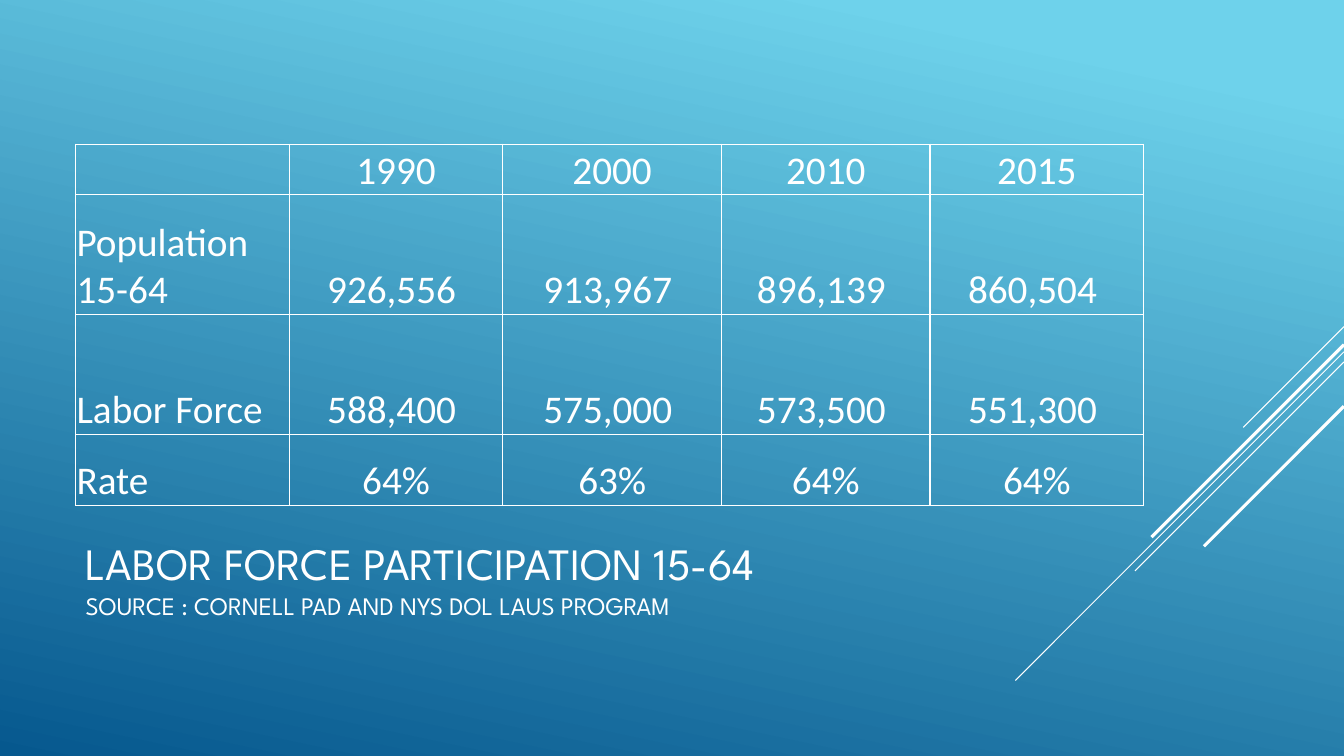
from dataclasses import dataclass

import pptx
import pptx.dml.color
import pptx.enum.shapes
import pptx.enum.text
import pptx.oxml
import pptx.oxml.ns
import pptx.util
from pptx.util import Pt

ANCHOR = pptx.enum.text.MSO_ANCHOR
ALIGN = pptx.enum.text.PP_ALIGN


@dataclass(frozen=True)
class Theme:
    white: str = "FFFFFF"
    sky: str = "6ED2EB"
    deep: str = "06588E"
    title_font: str = "League Spartan"
    table_font: str = "Calibri"
    title_size: int = 32
    source_size: int = 18
    table_size: int = 28


THEME = Theme()
SLIDE_WIDTH, SLIDE_HEIGHT = 960, 540

# Start height on the right edge, horizontal reach, line weight
DIAGONALS = [
    (233.3, 72, 0.75),
    (251.3, 234.7, 0.75),
    (258.5, 149.3, 0.75),
    (246.2, 137.5, 2.25),
    (290.2, 100, 2.25),
]

COLUMN_WIDTHS = [152.6, 152.6, 156.2, 149, 152.6]
ROW_HEIGHTS = [36, 85.7, 85.7, 50.4]
LABOR_ROWS = [
    ["", "1990", "2000", "2010", "2015"],
    ["Population 15-64", "926,556", "913,967", "896,139", "860,504"],
    ["Labor Force", "588,400", "575,000", "573,500", "551,300"],
    ["Rate", "64%", "63%", "64%", "64%"],
]


def rgb(value):
    return pptx.dml.color.RGBColor.from_string(value)


def style_run(run, font, size):
    run.font.name = font
    run.font.size = Pt(size)
    run.font.color.rgb = rgb(THEME.white)


def paint_background(slide):
    fill = slide.background.fill
    fill.gradient()
    fill.gradient_angle = 360 - 102
    stops = [(0.1, THEME.sky), (1, THEME.deep)]
    for stop, (position, color) in zip(fill.gradient_stops, stops):
        stop.position = position
        stop.color.rgb = rgb(color)


def add_diagonal(slide, top, reach, weight):
    diagonal = slide.shapes.add_connector(
        pptx.enum.shapes.MSO_CONNECTOR.STRAIGHT,
        Pt(SLIDE_WIDTH), Pt(top), Pt(SLIDE_WIDTH - reach), Pt(top + reach))
    diagonal.line.color.rgb = rgb(THEME.white)
    diagonal.line.width = Pt(weight)
    properties = diagonal.element.spPr
    properties.append(pptx.oxml.parse_xml(
        f'<a:effectLst {pptx.oxml.ns.nsdecls("a")}/>'))


def add_title(slide, heading, source):
    title = slide.shapes.add_textbox(Pt(54), Pt(353.5), Pt(672), Pt(118.8))
    frame = title.text_frame
    frame.word_wrap = True
    frame.vertical_anchor = ANCHOR.MIDDLE
    frame.text = f"{heading}\v{source}"
    sizes = [THEME.title_size, THEME.source_size]
    for run, size in zip(frame.paragraphs[0].runs, sizes):
        style_run(run, THEME.title_font, size)


def add_border(cell, side):
    border = pptx.oxml.parse_xml(
        f'<a:{side} {pptx.oxml.ns.nsdecls("a")} w="{Pt(1)}"><a:solidFill>'
        f'<a:srgbClr val="{THEME.white}"/></a:solidFill></a:{side}>')
    # Borders come before the fill in the cell properties
    cell._tc.get_or_add_tcPr().insert(0, border)


def fill_cell(cell, text, is_label, is_count):
    cell.fill.background()
    cell.vertical_anchor = ANCHOR.BOTTOM
    cell.margin_left = cell.margin_top = Pt(0.7)
    cell.margin_right = Pt(7 if is_count else 0.7)
    cell.margin_bottom = Pt(0)
    cell.text = text
    paragraph = cell.text_frame.paragraphs[0]
    paragraph.alignment = ALIGN.LEFT if is_label else ALIGN.CENTER
    for run in paragraph.runs:
        style_run(run, THEME.table_font, THEME.table_size)


def add_labor_table(slide):
    labor = slide.shapes.add_table(
        len(ROW_HEIGHTS), len(COLUMN_WIDTHS), Pt(54), Pt(103),
        Pt(sum(COLUMN_WIDTHS)), Pt(sum(ROW_HEIGHTS))).table
    labor.first_row = labor.horz_banding = False
    for column, width in zip(labor.columns, COLUMN_WIDTHS):
        column.width = Pt(width)
    for row, height in zip(labor.rows, ROW_HEIGHTS):
        row.height = Pt(height)
    for r, texts in enumerate(LABOR_ROWS):
        for c, text in enumerate(texts):
            cell = labor.cell(r, c)
            fill_cell(cell, text, is_label=c == 0, is_count="," in text)
            # Rule between the years and the figures
            if c > 0 and r < 2:
                add_border(cell, "lnB" if r == 0 else "lnT")


def main():
    deck = pptx.Presentation()
    deck.slide_width, deck.slide_height = Pt(SLIDE_WIDTH), Pt(SLIDE_HEIGHT)
    slide = deck.slides.add_slide(deck.slide_layouts[6])

    # Backdrop
    paint_background(slide)
    for top, reach, weight in DIAGONALS:
        add_diagonal(slide, top, reach, weight)

    # Content
    add_title(slide, "LABOR FORCE PARTICIPATION 15-64",
              "SOURCE : CORNELL PAD AND NYS DOL LAUS PROGRAM")
    add_labor_table(slide)

    deck.save("out.pptx")


if __name__ == "__main__":
    main()
